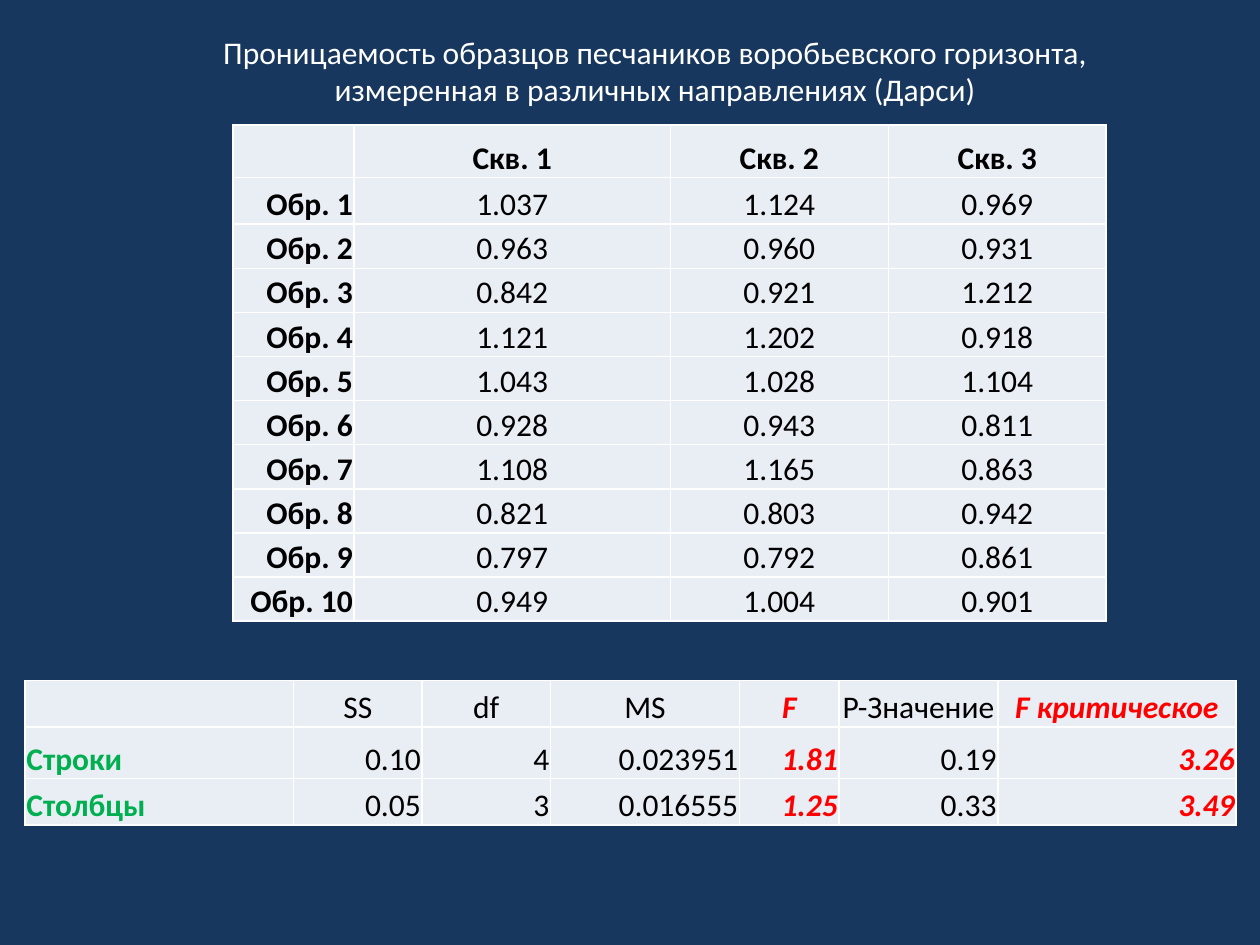
from dataclasses import dataclass

from lxml import etree
from pptx import Presentation
from pptx.dml.color import RGBColor
from pptx.enum import text
from pptx.oxml import ns
from pptx.util import Inches, Pt


@dataclass(frozen=True)
class Theme:
    background: str = "17375E"
    cell: str = "E9EDF4"
    border: str = "FFFFFF"
    title: str = "FFFFFF"
    body: str = "000000"
    source: str = "00B050"
    criterion: str = "FF0000"
    font: str = "Calibri"
    size: int = 18
    border_width: int = 1


THEME = Theme()
LEFT, CENTER, RIGHT = text.PP_ALIGN.LEFT, text.PP_ALIGN.CENTER, text.PP_ALIGN.RIGHT

WELLS = ["", "Скв. 1", "Скв. 2", "Скв. 3"]
PERMEABILITY = [
    ["1.037", "1.124", "0.969"],
    ["0.963", "0.960", "0.931"],
    ["0.842", "0.921", "1.212"],
    ["1.121", "1.202", "0.918"],
    ["1.043", "1.028", "1.104"],
    ["0.928", "0.943", "0.811"],
    ["1.108", "1.165", "0.863"],
    ["0.821", "0.803", "0.942"],
    ["0.797", "0.792", "0.861"],
    ["0.949", "1.004", "0.901"],
]
VARIANCE = [
    ["", "SS", "df", "MS", "F", "P-Значение", "F критическое"],
    ["Строки", "0.10", "4", "0.023951", "1.81", "0.19", "3.26"],
    ["Столбцы", "0.05", "3", "0.016555", "1.25", "0.33", "3.49"],
]


def put_text(p, words, color=THEME.body, align=LEFT, bold=False, italic=False):
    p.alignment = align
    r = p.add_run()
    r.text = words
    r.font.name = THEME.font
    r.font.size = Pt(THEME.size)
    r.font.bold = bold
    r.font.italic = italic
    r.font.color.rgb = RGBColor.from_string(color)


def format_cell(cell):
    cell.margin_left = cell.margin_right = cell.margin_top = Inches(0.01)
    cell.margin_bottom = 0
    cell.vertical_anchor = text.MSO_ANCHOR.BOTTOM
    tc_pr = cell._tc.get_or_add_tcPr()
    for side in ("lnL", "lnR", "lnT", "lnB"):
        ln = etree.SubElement(tc_pr, ns.qn(f"a:{side}"), w=str(Pt(THEME.border_width)))
        fill = etree.SubElement(ln, ns.qn("a:solidFill"))
        etree.SubElement(fill, ns.qn("a:srgbClr"), val=THEME.border)
    cell.fill.solid()
    cell.fill.fore_color.rgb = RGBColor.from_string(THEME.cell)


def add_grid(s, box, widths, heights, rows, style):
    table = s.shapes.add_table(len(rows), len(widths), *map(Inches, box)).table
    for column, width in zip(table.columns, widths):
        column.width = Inches(width)
    for row, height in zip(table.rows, heights):
        row.height = Inches(height)
    for i, row in enumerate(rows):
        for j, words in enumerate(row):
            cell = table.cell(i, j)
            format_cell(cell)
            if words:
                put_text(cell.text_frame.paragraphs[0], words, **style(i, j))


def permeability_style(i, j):
    return {"bold": i == 0 or j == 0, "align": CENTER if j else RIGHT}


def variance_style(i, j):
    if j == 0:
        return {"color": THEME.source, "bold": True}
    style = {"align": RIGHT if i else CENTER}
    if VARIANCE[0][j].startswith("F"):
        style.update(color=THEME.criterion, bold=True, italic=True)
    return style


def add_permeability(s, box):
    samples = [[f"Обр. {n}", *values] for n, values in enumerate(PERMEABILITY, 1)]
    add_grid(s, box, [0.96, 2.51, 1.73, 1.73], [0.42, 0.37] + [0.35] * 9,
             [WELLS, *samples], permeability_style)


def add_variance(s, box):
    add_grid(s, box, [2.13, 1.02, 1.02, 1.5, 0.79, 1.26, 1.89], [0.37, 0.41, 0.37],
             VARIANCE, variance_style)


def add_title(s, box):
    tf = s.shapes.add_textbox(*map(Inches, box)).text_frame
    tf.word_wrap = True
    tf.auto_size = text.MSO_AUTO_SIZE.SHAPE_TO_FIT_TEXT
    format_title = {"color": THEME.title, "align": CENTER}
    put_text(tf.paragraphs[0], "Проницаемость образцов песчаников воробьевского горизонта,",
             **format_title)
    put_text(tf.add_paragraph(), "измеренная в различных направлениях (Дарси)", **format_title)


def main():
    prs = Presentation()
    prs.slide_width, prs.slide_height = Inches(10), Inches(7.5)
    s = prs.slides.add_slide(prs.slide_layouts[6])
    s.background.fill.solid()
    s.background.fill.fore_color.rgb = RGBColor.from_string(THEME.background)
    add_permeability(s, (1.85, 0.99, 6.93, 3.94))
    add_title(s, (0.67, 0.21, 9.06, 0.71))
    add_variance(s, (0.2, 5.4, 9.61, 1.16))
    prs.save("out.pptx")


if __name__ == "__main__":
    main()
